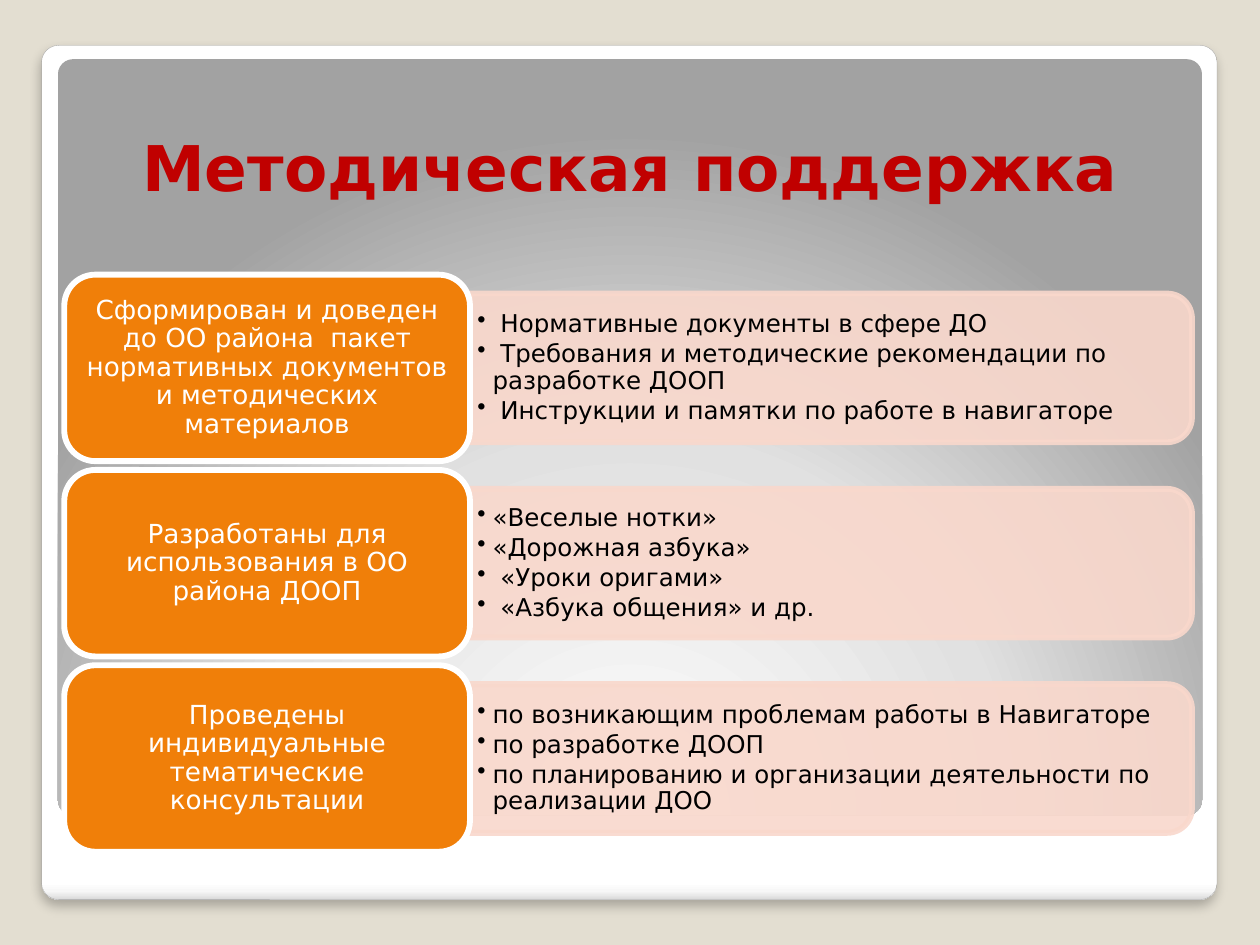
from lxml import etree
from pptx import Presentation
from pptx.dml.color import RGBColor
from pptx.enum.shapes import MSO_SHAPE
from pptx.enum.text import MSO_ANCHOR, PP_ALIGN
from pptx.oxml import parse_xml
from pptx.oxml.ns import qn
from pptx.util import Inches, Pt

ROUND, TAB = MSO_SHAPE.ROUNDED_RECTANGLE, MSO_SHAPE.ROUND_2_SAME_RECTANGLE
MIDDLE, BOTTOM = MSO_ANCHOR.MIDDLE, MSO_ANCHOR.BOTTOM
LEFT, CENTER = PP_ALIGN.LEFT, PP_ALIGN.CENTER
NAMESPACE = 'xmlns:a="http://schemas.openxmlformats.org/drawingml/2006/main"'
FONT = "DejaVu Sans"
BEIGE, WHITE, BLACK = "E3DED1", "FFFFFF", "000000"
RED, ORANGE, PINK, GREY = "C00000", "F07F09", "F9D8CC", "A4A4A4"

TITLE = "Методическая поддержка"
ROWS = [
    ("Сформирован и доведен до ОО района  пакет нормативных документов и методических материалов",
     [" Нормативные документы в сфере ДО",
      " Требования и методические рекомендации по разработке ДООП",
      " Инструкции и памятки по работе в навигаторе"]),
    ("Разработаны для использования в ОО района ДООП",
     ["«Веселые нотки»", "«Дорожная азбука»", " «Уроки оригами»", " «Азбука общения» и др."]),
    ("Проведены индивидуальные тематические консультации",
     ["по возникающим проблемам работы в Навигаторе",
      "по разработке ДООП",
      "по планированию и организации деятельности по реализации ДОО"]),
]
FRAME_STOPS = [(0, "FFFFFF"), (98, "FFFFFF"), (99, "F7F7F7"), (100, "DADADA")]
PANEL_STOPS = [(0, "FFFFFF"), (55, "E1E1E1"), (100, "A2A2A2")]

# Row grid, in inches
GRID_LEFT, GRID_TOP, ROW_PITCH = 0.51, 2.18, 1.55
CARD_WIDTH, CARD_HEIGHT = 3.22, 1.48
BAR_WIDTH, BAR_HEIGHT = 5.73, 1.18
LIST_WIDTH, LIST_HEIGHT = 5.67, 1.07
BORDER = 3.35


def color(value):
    return RGBColor.from_string(value)


def add_box(page, kind, left, top, width, height, fill=None, line=None, line_width=BORDER):
    box = page.shapes.add_shape(kind, *map(Inches, (left, top, width, height)))
    box.shadow.inherit = False
    if fill:
        box.fill.solid()
        box.fill.fore_color.rgb = color(fill)
    if line:
        box.line.color.rgb = color(line)
        box.line.width = Pt(line_width)
    else:
        box.line.fill.background()
    return box


def set_gradient(box, stops, direction):
    """Fill with (percent, colour) stops; direction is the a:lin or a:path element."""
    marks = "".join(f'<a:gs pos="{share * 1000}"><a:srgbClr val="{value}"/></a:gs>'
                    for share, value in stops)
    gradient = parse_xml(f'<a:gradFill {NAMESPACE} rotWithShape="1">'
                         f'<a:gsLst>{marks}</a:gsLst>{direction}</a:gradFill>')
    box.element.spPr.find(qn("a:prstGeom")).addnext(gradient)


def set_shadow(box):
    effects = box.element.spPr.find(qn("a:effectLst"))
    effects.append(parse_xml(
        f'<a:outerShdw {NAMESPACE} blurRad="{Pt(6)}" dist="{Pt(4)}" dir="5400000" '
        'algn="t" rotWithShape="0"><a:srgbClr val="000000"><a:alpha val="25000"/>'
        '</a:srgbClr></a:outerShdw>'))


def set_opacity(box, percent):
    for mark in box.element.spPr.iter(qn("a:srgbClr")):
        etree.SubElement(mark, qn("a:alpha")).set("val", str(percent * 1000))


def write(box, lines, size, text_color, bold=False, align=LEFT, anchor=MIDDLE,
          insets=(0.06, 0.03, 0.06, 0.03), spacing=0.9, after=0, bullet=None):
    frame = box.text_frame
    frame.word_wrap = True
    frame.vertical_anchor = anchor
    (frame.margin_left, frame.margin_top,
     frame.margin_right, frame.margin_bottom) = map(Inches, insets)
    for index, line in enumerate(lines):
        para = frame.paragraphs[0] if index == 0 else frame.add_paragraph()
        para.alignment, para.line_spacing, para.space_after = align, spacing, Pt(after)
        if bullet:
            properties = para._p.get_or_add_pPr()
            properties.set("marL", str(Inches(0.12)))
            properties.set("indent", str(-Inches(0.12)))
            etree.SubElement(properties, qn("a:buChar")).set("char", bullet)
        span = para.add_run()
        span.text = line
        span.font.name, span.font.size, span.font.bold = FONT, Pt(size), bold
        span.font.color.rgb = color(text_color)


def add_backdrop(page):
    page.background.fill.solid()
    page.background.fill.fore_color.rgb = color(BEIGE)
    frame = add_box(page, ROUND, 0.33, 0.36, 9.33, 6.78, line=GREY, line_width=0.16)
    set_gradient(frame, FRAME_STOPS, '<a:lin ang="5400000" scaled="0"/>')
    set_shadow(frame)
    panel = add_box(page, ROUND, 0.46, 0.47, 9.08, 6)
    set_gradient(panel, PANEL_STOPS, '<a:path path="circle"><a:fillToRect l="50000" '
                                     't="175000" r="50000" b="-75000"/></a:path>')
    for box in (frame, panel):
        box.adjustments[0] = 0.02


def add_title(page):
    title = page.shapes.title
    title.left, title.top, title.width, title.height = map(Inches, (0.51, 0.52, 8.95, 1.15))
    write(title, [TITLE], 36, RED, bold=True, anchor=BOTTOM,
          insets=(0.62, 0.05, 0.1, 0.05), spacing=1.0)
    title.element.getparent().append(title.element)  # in front of the backdrop


def add_row(page, index, label, points):
    top = GRID_TOP + index * ROW_PITCH
    middle = top + CARD_HEIGHT / 2
    split = GRID_LEFT + CARD_WIDTH
    # The bar is a tab on its side, so its own width and height are swapped
    bar = add_box(page, TAB, split + (BAR_WIDTH - BAR_HEIGHT) / 2, middle - BAR_WIDTH / 2,
                  BAR_HEIGHT, BAR_WIDTH, PINK, PINK)
    bar.rotation = 90
    set_opacity(bar, 90)
    details = page.shapes.add_textbox(*map(Inches, (
        split, middle - LIST_HEIGHT / 2, LIST_WIDTH, LIST_HEIGHT)))
    write(details, points, 14, BLACK, after=2, bullet="•")
    card = add_box(page, ROUND, GRID_LEFT, top, CARD_WIDTH, CARD_HEIGHT, ORANGE, WHITE)
    write(card, [label], 15, WHITE, align=CENTER)


def main():
    deck = Presentation()
    deck.slide_width, deck.slide_height = Inches(10), Inches(7.5)
    page = deck.slides.add_slide(deck.slide_layouts[5])
    add_backdrop(page)
    add_title(page)
    for index, (label, points) in enumerate(ROWS):
        add_row(page, index, label, points)
    deck.save("out.pptx")


if __name__ == "__main__":
    main()
